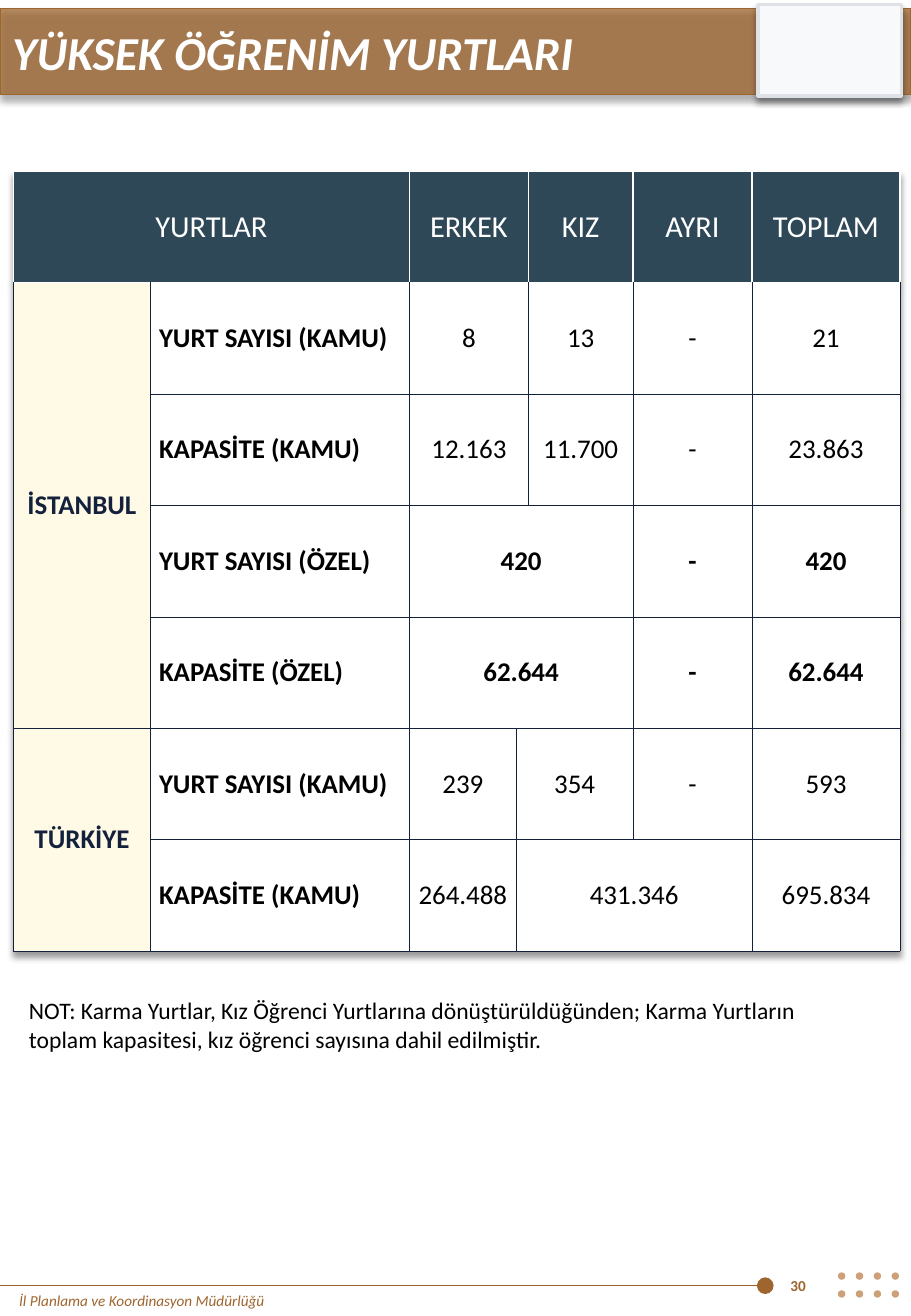
from itertools import product
from lxml.etree import SubElement
from pptx import Presentation
from pptx.dml.color import RGBColor
from pptx.enum.shapes import MSO_CONNECTOR, MSO_SHAPE
from pptx.enum.text import MSO_ANCHOR, MSO_AUTO_SIZE, PP_ALIGN
from pptx.oxml.ns import qn
from pptx.util import Pt

BROWN, TAN, NAVY, SLATE = "9E652E", "CDA077", "14213D", "2F4858"
CREAM, WHITE, BLACK = "FFFAE5", "FFFFFF", "000000"
COLUMNS = [81.4, 153.4, 63.4, 7.2, 61.9, 70.6, 87.8]
ROW_HEIGHT = 66
HEADER = [("YURTLAR", 2), ("ERKEK", 2), ("KIZ", 1), ("AYRI", 1), ("TOPLAM", 1)]
GROUPS = [
    ("İSTANBUL", [
        ("YURT SAYISI (KAMU)", False, [("8", 2), ("13", 1), ("-", 1), ("21", 1)]),
        ("KAPASİTE (KAMU)", False, [("12.163", 2), ("11.700", 1), ("-", 1), ("23.863", 1)]),
        ("YURT SAYISI (ÖZEL)", True, [("420", 3), ("-", 1), ("420", 1)]),
        ("KAPASİTE (ÖZEL)", True, [("62.644", 3), ("-", 1), ("62.644", 1)]),
    ]),
    ("TÜRKİYE", [
        ("YURT SAYISI (KAMU)", False, [("239", 1), ("354", 2), ("-", 1), ("593", 1)]),
        ("KAPASİTE (KAMU)", False, [("264.488", 1), ("431.346", 3), ("695.834", 1)]),
    ]),
]
NOTE = ("NOT: Karma Yurtlar, Kız Öğrenci Yurtlarına dönüştürüldüğünden; Karma Yurtların "
        "toplam kapasitesi, kız öğrenci sayısına dahil edilmiştir.")


def rgb(color):
    return RGBColor.from_string(color)


def set_attrs(obj, values):
    for name, value in values.items():
        setattr(obj, name, value)


def write(tf, text, size, color, align=PP_ALIGN.LEFT, **style):
    p = tf.paragraphs[0]
    p.alignment = align
    r = p.add_run()
    r.text = text
    set_attrs(r.font, {"name": "Calibri", "size": Pt(size), **style})
    r.font.color.rgb = rgb(color)


def add_text(s, box, text, size, color, anchor=MSO_ANCHOR.TOP, **style):
    tf = s.shapes.add_textbox(*map(Pt, box)).text_frame
    set_attrs(tf, {"word_wrap": True, "vertical_anchor": anchor})
    write(tf, text, size, color, **style)


def add_shadow(effects):
    shadow = SubElement(effects, qn("a:outerShdw"), blurRad=str(Pt(4)), dist=str(Pt(3)),
                        dir="5400000", algn="t", rotWithShape="0")
    color = SubElement(shadow, qn("a:srgbClr"), val=BLACK)
    SubElement(color, qn("a:alpha"), val="40000")


def add_filled(s, kind, box, fill, line=None, width=0):
    sp = s.shapes.add_shape(kind, *map(Pt, box))
    sp.shadow.inherit = False
    sp.fill.solid()
    sp.fill.fore_color.rgb = rgb(fill)
    if line:
        sp.line.color.rgb = rgb(line)
        sp.line.width = Pt(width)
        add_shadow(sp._element.spPr.find(qn("a:effectLst")))
    else:
        sp.line.fill.background()
    return sp


def build_banner(s, left, top, width, height):
    bar = add_filled(s, MSO_SHAPE.RECTANGLE, (left, top, width, height), BROWN, BROWN, 1)
    color = bar._element.spPr.find(qn("a:solidFill")).find(qn("a:srgbClr"))
    SubElement(color, qn("a:alpha"), val="75000")
    add_filled(s, MSO_SHAPE.RECTANGLE, (left + width - 90.7, top - 2.2, 85, 54),
               "F8F9FA", "DEE2E6", 2)
    title = s.shapes.title
    set_attrs(title, {"left": Pt(left), "top": Pt(top + 5), "width": Pt(width),
                      "height": Pt(41)})
    tf = title.text_frame
    set_attrs(tf, {"word_wrap": True, "auto_size": MSO_AUTO_SIZE.NONE,
                   "vertical_anchor": MSO_ANCHOR.TOP})
    write(tf, "YÜKSEK ÖĞRENİM YURTLARI", 28, WHITE, bold=True, italic=True)
    s.shapes._spTree.append(title._element)


def set_borders(cell, colors):
    tc_pr = cell._tc.get_or_add_tcPr()
    for side, color in zip("LRTB", colors):
        line = SubElement(tc_pr, qn(f"a:ln{side}"), w=str(Pt(1 if color == WHITE else 0.25)))
        SubElement(SubElement(line, qn("a:solidFill")), qn("a:srgbClr"), val=color)


def fill_cell(cell, text, size, color, fill, inset, **style):
    x, y = inset
    set_attrs(cell, {"vertical_anchor": MSO_ANCHOR.MIDDLE, "margin_left": Pt(x),
                     "margin_right": Pt(x), "margin_top": Pt(y), "margin_bottom": Pt(y)})
    cell.fill.solid()
    cell.fill.fore_color.rgb = rgb(fill)
    write(cell.text_frame, text, size, color, **style)


def fill_spans(table, row, col, items, *look, **style):
    for text, span in items:
        cell = table.cell(row, col)
        if span > 1:
            cell.merge(table.cell(row, col + span - 1))
        fill_cell(cell, text, *look, align=PP_ALIGN.CENTER, **style)
        col += span


def build_table(s, left, top):
    count = 1 + sum(len(rows) for _, rows in GROUPS)
    frame = s.shapes.add_table(count, len(COLUMNS), Pt(left), Pt(top),
                               Pt(sum(COLUMNS)), Pt(ROW_HEIGHT * count))
    table = frame.table
    set_attrs(table, {"first_row": False, "horz_banding": False})
    tbl_pr = table._tbl.tblPr
    effects = SubElement(tbl_pr, qn("a:effectLst"))
    tbl_pr.insert(0, effects)
    add_shadow(effects)
    for column, width in zip(table.columns, COLUMNS):
        column.width = Pt(width)
    for row, col in product(range(count), range(len(COLUMNS))):
        colors = [WHITE] * 4 if row == 0 else [NAVY, NAVY, WHITE if row == 1 else NAVY, NAVY]
        set_borders(table.cell(row, col), colors)
    label_inset, value_inset = (5, 3), (0.7, 0.4)
    fill_spans(table, 0, 0, HEADER, 18, WHITE, SLATE, label_inset)
    row = 1
    for group, rows in GROUPS:
        cell = table.cell(row, 0)
        cell.merge(table.cell(row + len(rows) - 1, 0))
        fill_cell(cell, group, 16, NAVY, CREAM, label_inset, align=PP_ALIGN.CENTER, bold=True)
        for label, bold, values in rows:
            fill_cell(table.cell(row, 1), label, 16, BLACK, WHITE, label_inset, bold=True)
            fill_spans(table, row, 2, values, 16, BLACK, WHITE, value_inset, bold=bold)
            row += 1


def build_footer(s, left, top, width):
    rule_y = top + 15
    rule = s.shapes.add_connector(MSO_CONNECTOR.STRAIGHT, Pt(left + 453.6), Pt(rule_y),
                                  Pt(left), Pt(rule_y))
    rule.line.color.rgb = rgb(BROWN)
    rule.line.width = Pt(0.5)
    SubElement(rule.line._get_or_add_ln(), qn("a:headEnd"), type="oval", w="lg", len="lg")
    SubElement(rule._element.spPr, qn("a:effectLst"))
    step = 10.6
    for col, row in product(range(4), range(2)):
        add_filled(s, MSO_SHAPE.OVAL,
                   (left + width - 43.3 + col * step, top + 7.1 + row * step, 4.4, 4.4), TAN)
    add_text(s, (left + 4.3, rule_y, 338, 18), "İl Planlama ve Koordinasyon Müdürlüğü",
             9, BROWN, italic=True)
    add_text(s, (left + 461.5, top, 36, 30), "30", 9, BROWN, MSO_ANCHOR.MIDDLE, bold=True)


def main():
    prs = Presentation()
    set_attrs(prs, {"slide_width": Pt(540), "slide_height": Pt(779.76)})
    s = prs.slides.add_slide(prs.slide_layouts[5])
    build_banner(s, 0, 5, 540, 51)
    build_table(s, 7.9, 101.5)
    add_text(s, (10.1, 586.8, 497.5, 41), NOTE, 14, BLACK)
    build_footer(s, 0, 746.8, 540)
    prs.save("out.pptx")


if __name__ == "__main__":
    main()
